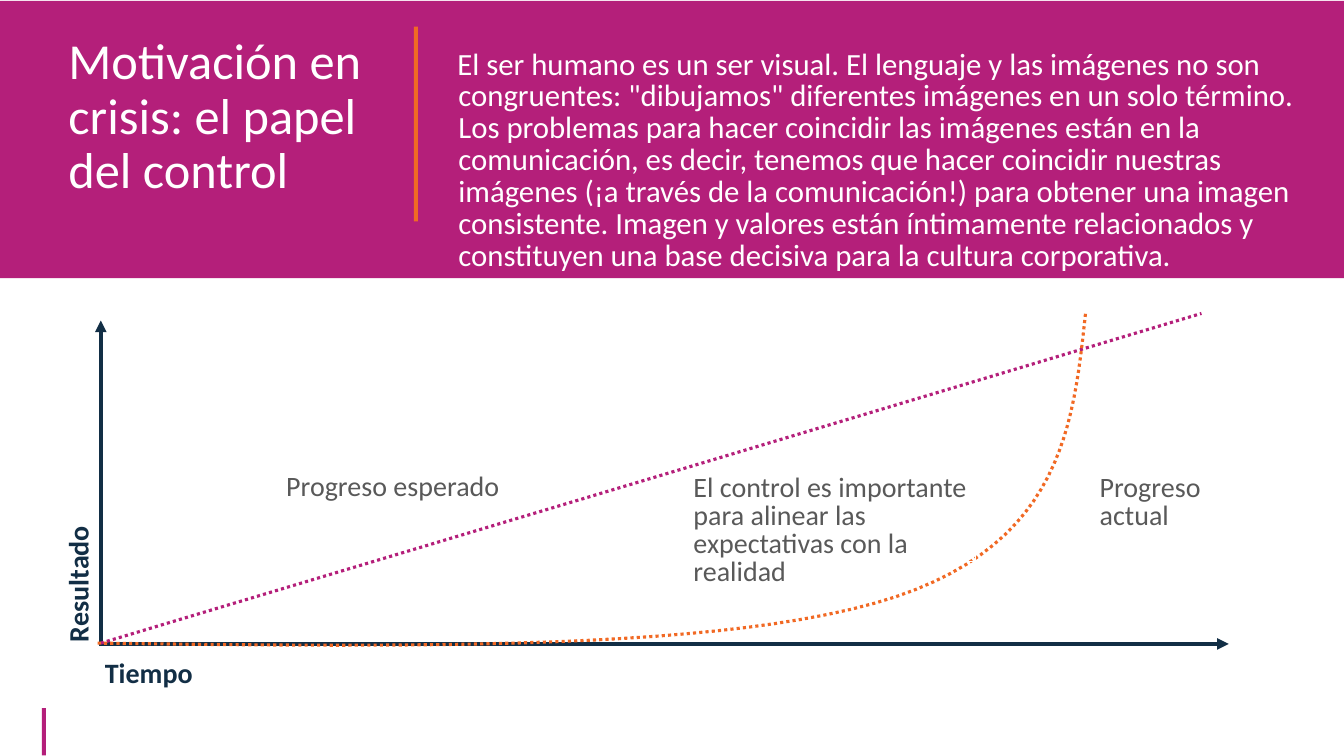
from lxml import etree
from pptx import Presentation
from pptx.dml.color import RGBColor
from pptx.enum.dml import MSO_LINE
from pptx.enum.shapes import MSO_CONNECTOR, MSO_SHAPE
from pptx.enum.text import MSO_ANCHOR, MSO_AUTO_SIZE, PP_ALIGN
from pptx.oxml.ns import qn
from pptx.util import Pt

RECT = MSO_SHAPE.RECTANGLE
LINE = MSO_CONNECTOR.STRAIGHT
DOTS = MSO_LINE.ROUND_DOT
GROW = MSO_AUTO_SIZE.SHAPE_TO_FIT_TEXT
TOP = MSO_ANCHOR.TOP
LEFT = PP_ALIGN.LEFT

PINK, ORANGE, NAVY = "B41F7A", "F16924", "122E45"
GREY, WHITE = "595959", "FFFFFF"


def color(code):
    return RGBColor.from_string(code)


def curve(start, bends, steps=24):
    """Points along a chain of cubic curves."""
    points = [start]
    for one, two, end in bends:
        first = points[-1]
        for step in range(1, steps + 1):
            t = step / steps
            u = 1 - t
            points.append(tuple(
                u**3 * a + 3 * u * u * t * b + 3 * u * t * t * c + t**3 * d
                for a, b, c, d in zip(first, one, two, end)))
    return points


class Board:
    font = "Calibri"
    inset = (2.88, 1.44)

    def __init__(self, slide):
        self.slide = slide
        self.shapes = slide.shapes

    def box(self, x, y, w, h):
        return [Pt(n) for n in (x, y, w, h)]

    def bar(self, place, fill=None, edge=None):
        shape = self.shapes.add_shape(RECT, *self.box(*place))
        shape.shadow.inherit = False
        if fill:
            shape.fill.solid()
            shape.fill.fore_color.rgb = color(fill)
        else:
            shape.fill.background()
        if edge:
            self.stroke(shape.line, edge, 0.75)
        else:
            shape.line.fill.background()
        return shape

    def stroke(self, line, tone, width, dash=None):
        line.color.rgb = color(tone)
        line.width = Pt(width)
        if dash:
            line.dash_style = dash

    def line(self, start, end, tone, width, dash=None, arrow=False):
        link = self.shapes.add_connector(
            LINE, *[Pt(n) for n in (*start, *end)])
        self.stroke(link.line, tone, width, dash)
        props = link._element.spPr
        if arrow:
            tip = etree.SubElement(props.find(qn("a:ln")), qn("a:tailEnd"))
            tip.set("type", "triangle")
        etree.SubElement(props, qn("a:effectLst"))

    def trace(self, points, tone, width, dash):
        dots = [(x * 100, y * 100) for x, y in points]
        pen = self.shapes.build_freeform(*dots[0], scale=Pt(1) / 100)
        pen.add_line_segments(dots[1:], close=False)
        shape = pen.convert_to_shape()
        shape.shadow.inherit = False
        shape.fill.background()
        self.stroke(shape.line, tone, width, dash)

    def text(self, place, words, size, tone, space=None, bold=False):
        shape = self.shapes.add_textbox(*self.box(*place))
        self.letter(shape, words, size, tone, space, bold)
        return shape

    def label(self, place, words, tone=GREY, space=Pt(20), bold=False):
        shape = self.text(place, words, 20, tone, space, bold)
        self.tighten(shape)
        return shape

    def note(self, place, words):
        shape = self.bar(place, edge=WHITE)
        self.letter(shape, words, 20, GREY, Pt(20))
        self.tighten(shape)

    def tighten(self, shape):
        frame = shape.text_frame
        side, end = self.inset
        frame.margin_left = frame.margin_right = Pt(side)
        frame.margin_top = frame.margin_bottom = Pt(end)
        frame.auto_size = GROW

    def letter(self, shape, words, size, tone, space=None, bold=False):
        frame = shape.text_frame
        frame.word_wrap = True
        frame.vertical_anchor = TOP
        frame.text = words
        para = frame.paragraphs[0]
        para.alignment = LEFT
        if space:
            para.line_spacing = space
        for run in para.runs:
            run.font.name = self.font
            run.font.size = Pt(size)
            run.font.bold = bold
            run.font.color.rgb = color(tone)


def main():
    deck = Presentation()
    deck.slide_width, deck.slide_height = Pt(960), Pt(540)
    board = Board(deck.slides.add_slide(deck.slide_layouts[6]))

    # Header band and accents
    board.bar((29.9, 505.8, 2.9, 33.8), PINK)
    board.bar((0, 0.7, 960, 198), PINK)
    body = board.text(
        (319.7, 31.7, 623.5, 141.8),
        'El ser humano es un ser visual. El lenguaje y las imágenes no son '
        'congruentes: "dibujamos" diferentes imágenes en un solo término. '
        'Los problemas para hacer coincidir las imágenes están en la '
        'comunicación, es decir, tenemos que hacer coincidir nuestras '
        'imágenes (¡a través de la comunicación!) para obtener una imagen '
        'consistente. Imagen y valores están íntimamente relacionados y '
        'constituyen una base decisiva para la cultura corporativa.',
        22, WHITE, Pt(22.8))
    indent = body.text_frame.paragraphs[0]._p.get_or_add_pPr()
    indent.set("marL", str(Pt(0.72)))
    indent.set("indent", str(-Pt(0.72)))
    board.text((41.8, 22.3, 257.8, 176.4),
               "Motivación en crisis: el papel del control", 36, WHITE, 0.9)
    board.bar((295.6, 19.1, 2.9, 139), ORANGE)

    # Axes
    board.line((72, 461.5), (72, 229), NAVY, 2.75, arrow=True)
    board.line((72, 460), (877.7, 460), NAVY, 2.75, arrow=True)
    board.label((72, 466.6, 805.7, 26.6), "Tiempo", NAVY, None, True)
    side = board.label((-51.8, 339.8, 215.3, 28.1), "Resultado",
                       NAVY, None, True)
    side.rotation = 270

    # Expected and actual progress
    board.line((72, 459.4), (858.2, 223.9), PINK, 2.25, DOTS)
    actual = curve((69.8, 459.4), [
        ((295.9, 462.2), (522.7, 465.1), (640.1, 426.2)),
        ((757.4, 386.6), (766.8, 305.3), (775.4, 223.9)),
    ])
    board.trace(actual, ORANGE, 2.25, DOTS)

    # Notes
    board.label((201.6, 337, 204.5, 23), "Progreso esperado")
    board.label((782.6, 337.7, 101.5, 43.2), "Progreso actual")
    board.note((492.5, 337.7, 204.5, 63.4),
               "El control es importante para alinear las expectativas "
               "con la realidad")

    deck.save("out.pptx")


if __name__ == "__main__":
    main()
